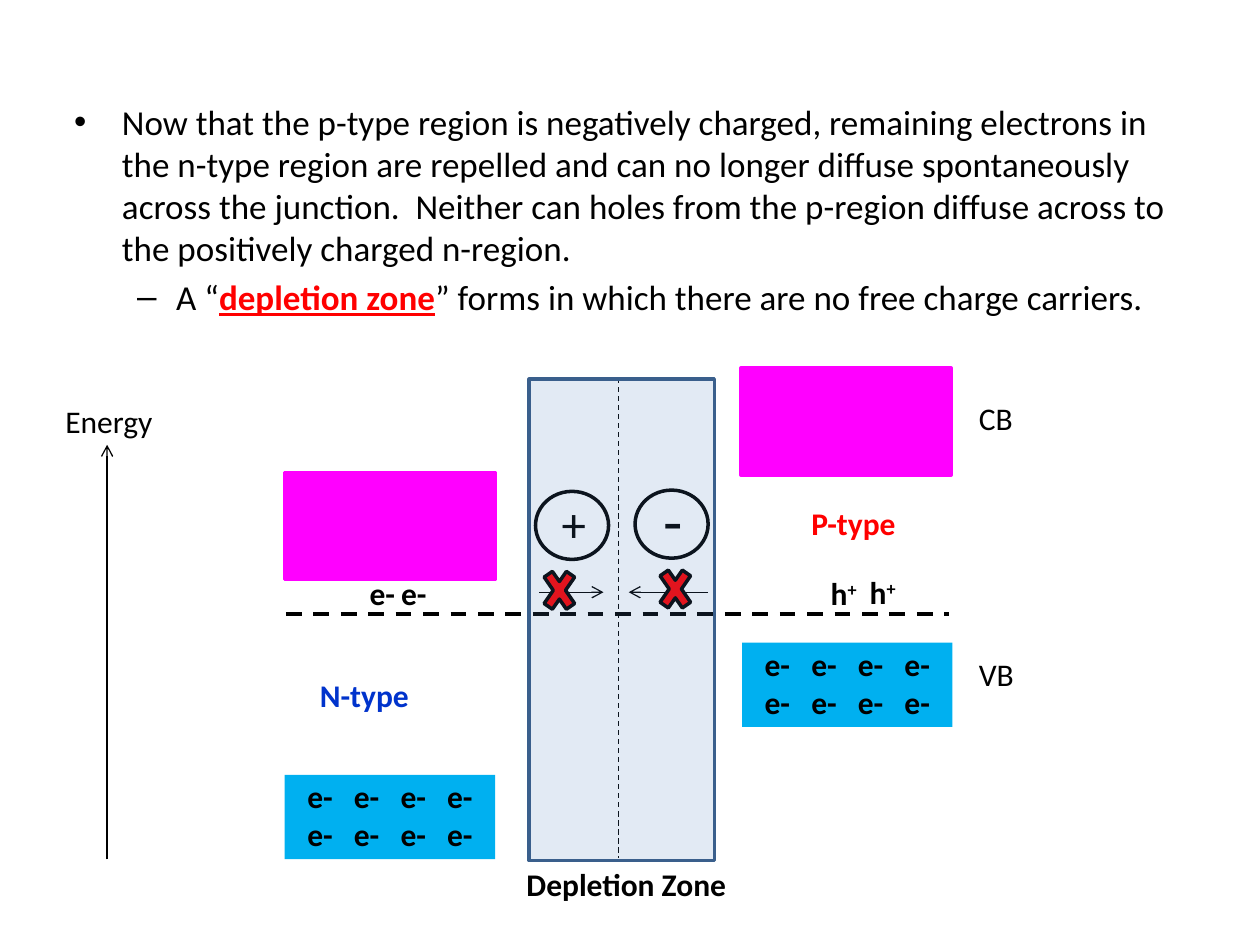
from lxml.etree import SubElement
from pptx import Presentation
from pptx.dml.color import RGBColor
from pptx.enum.dml import MSO_LINE
from pptx.enum.shapes import MSO_CONNECTOR, MSO_SHAPE
from pptx.enum.text import PP_ALIGN
from pptx.oxml.ns import qn
from pptx.util import Inches, Pt

COLORS = {
    "black": "000000", "red": "FF0000", "blue": "0033CC", "valence": "00B0F0",
    "conduction": "FF00FF", "zone": "4F81BD", "zone_edge": "3A5F8C",
}
FONT = "Calibri"

# Bullet, left margin, hanging indent, runs of (text, is key term)
BULLETS = [
    ("•", 0.38, 0.38, [
        ("Now that the p-type region is negatively charged, remaining electrons in "
         "the n-type region are repelled and can no longer diffuse spontaneously "
         "across the junction.  Neither can holes from the p-region diffuse across "
         "to the positively charged n-region.", False)]),
    ("–", 0.81, 0.31, [
        ("A “", False), ("depletion zone", True),
        ("” forms in which there are no free charge carriers.", False)]),
]

# Left and top of each band
BAND_WIDTH, CONDUCTION_HEIGHT, VALENCE_HEIGHT = 1.67, 0.85, 0.67
CONDUCTION_BANDS = [(2.26, 3.75), (5.88, 2.92)]
VALENCE_BANDS = [(2.26, 6.15), (5.89, 5.1)]
ELECTRON_ROWS, ELECTRONS_PER_ROW, ELECTRON_PITCH = 2, 4, 0.37

# Text, left, top, width, colour, bold
LABELS = [
    ("Energy", 0.42, 3.14, 0.96, "black", False),
    ("CB", 7.67, 3.12, 0.58, "black", False),
    ("VB", 7.67, 5.15, 0.58, "black", False),
    ("N-type", 2.44, 5.32, 0.92, "blue", True),
    ("P-type", 6.34, 3.95, 0.92, "red", True),
    ("Depletion Zone", 4.08, 6.82, 1.88, "black", True),
]
# Text, superscript, left, top
CARRIER_WIDTH = 0.61
CARRIERS = [
    ("e-", "", 2.73, 4.51), ("e-", "", 2.98, 4.51),
    ("h", "+", 6.39, 4.51), ("h", "+", 6.7, 4.5),
]
# Sign, size, text left and top, circle left and top
IONS = [("+", 28, 4.36, 3.87, 4.25, 3.9), ("-", 36, 5.17, 3.77, 5.04, 3.89)]
BLOCKED_MARKS = [(4.27, 4.44), (5.19, 4.43)]

# Start, end, weight, dashed, arrow
LINES = [
    ((2.27, 4.87), (7.53, 4.87), 2.25, True, False),
    ((4.91, 3), (4.91, 6.81), 0.75, True, False),
    ((4.28, 4.7), (4.79, 4.7), 0.75, False, True),
    ((5.62, 4.7), (4.99, 4.7), 0.75, False, True),
    ((0.85, 6.82), (0.85, 3.53), 0.75, False, True),
]


def rgb(name):
    return RGBColor.from_string(COLORS[name])


def add_block(slide, preset, left, top, width, height, fill=None, edge=None):
    block = slide.shapes.add_shape(
        preset, Inches(left), Inches(top), Inches(width), Inches(height))
    block.shadow.inherit = False
    if fill:
        block.fill.solid()
        block.fill.fore_color.rgb = rgb(fill)
    else:
        block.fill.background()
    if edge:
        block.line.color.rgb = rgb(edge)
        block.line.width = Pt(2)
    else:
        block.line.fill.background()
    return block


def add_text_frame(slide, left, top, width, height):
    frame = slide.shapes.add_textbox(
        Inches(left), Inches(top), Inches(width), Inches(height)).text_frame
    frame.word_wrap = True
    return frame


def add_run(paragraph, text, size=18, color="black", bold=False):
    run = paragraph.add_run()
    run.text = text
    run.font.name = FONT
    run.font.size = Pt(size)
    run.font.bold = bold
    run.font.color.rgb = rgb(color)
    return run


def add_line(slide, start, end, weight, dashed, arrow):
    line = slide.shapes.add_connector(
        MSO_CONNECTOR.STRAIGHT, *(Inches(value) for value in start + end))
    line.line.color.rgb = rgb("black")
    line.line.width = Pt(weight)
    if dashed:
        line.line.dash_style = MSO_LINE.DASH
    if arrow:
        SubElement(line.line._get_or_add_ln(), qn("a:tailEnd"), type="arrow")
    SubElement(line._element.spPr, qn("a:effectLst"))


def add_bullets(slide):
    frame = add_text_frame(slide, 0.49, 0.75, 9, 1.92)
    for index, (bullet, margin, hanging, runs) in enumerate(BULLETS):
        paragraph = frame.paragraphs[0] if index == 0 else frame.add_paragraph()
        paragraph.level = index
        paragraph.space_before = Pt(4)
        properties = paragraph._p.get_or_add_pPr()
        properties.set("marL", str(Inches(margin)))
        properties.set("indent", str(-Inches(hanging)))
        SubElement(properties, qn("a:buFont"), typeface="Arial")
        SubElement(properties, qn("a:buChar"), char=bullet)
        for text, is_key in runs:
            run = add_run(paragraph, text, 20, "red" if is_key else "black", is_key)
            run.font.underline = is_key


def add_valence_band(slide, left, top):
    """Filled band with rows of electrons spaced by tab stops."""
    add_block(slide, MSO_SHAPE.RECTANGLE, left, top, BAND_WIDTH, VALENCE_HEIGHT,
              "valence")
    frame = add_text_frame(slide, left + 0.08, top - 0.03, 1.58, 0.71)
    for row in range(ELECTRON_ROWS):
        paragraph = frame.paragraphs[0] if row == 0 else frame.add_paragraph()
        stops = SubElement(paragraph._p.get_or_add_pPr(), qn("a:tabLst"))
        for column in range(1, ELECTRONS_PER_ROW):
            SubElement(stops, qn("a:tab"), algn="l",
                       pos=str(Inches(column * ELECTRON_PITCH)))
        add_run(paragraph, "\t".join(["e-"] * ELECTRONS_PER_ROW), bold=True)


def main():
    deck = Presentation()
    deck.slide_width, deck.slide_height = Inches(10), Inches(7.5)
    slide = deck.slides.add_slide(deck.slide_layouts[6])

    add_bullets(slide)
    for left, top in CONDUCTION_BANDS:
        add_block(slide, MSO_SHAPE.RECTANGLE, left, top, BAND_WIDTH,
                  CONDUCTION_HEIGHT, "conduction", "conduction")
    for left, top in VALENCE_BANDS:
        add_valence_band(slide, left, top)
    for line in LINES:
        add_line(slide, *line)
    for sign, size, left, top, circle_left, circle_top in IONS:
        frame = add_text_frame(slide, left, top, 0.38, size / 50)
        add_run(frame.paragraphs[0], sign, size)
        add_block(slide, MSO_SHAPE.OVAL, circle_left, circle_top, 0.58, 0.54,
                  edge="black")
    for text, superscript, left, top in CARRIERS:
        paragraph = add_text_frame(slide, left, top, CARRIER_WIDTH, 0.4).paragraphs[0]
        paragraph.alignment = PP_ALIGN.CENTER
        add_run(paragraph, text, bold=True)
        if superscript:
            raised = add_run(paragraph, superscript, bold=True)
            raised.font._element.set("baseline", "30000")
    for left, top in BLOCKED_MARKS:
        add_block(slide, MSO_SHAPE.MATH_MULTIPLY, left, top, 0.34, 0.49,
                  "red", "black")

    zone = add_block(slide, MSO_SHAPE.RECTANGLE, 4.2, 3.01, 1.47, 3.82,
                     "zone", "zone_edge")
    zone_color = zone._element.spPr.find(qn("a:solidFill")).find(qn("a:srgbClr"))
    SubElement(zone_color, qn("a:alpha"), val="16000")
    for text, left, top, width, color, bold in LABELS:
        frame = add_text_frame(slide, left, top, width, 0.4)
        add_run(frame.paragraphs[0], text, color=color, bold=bold)

    deck.save("out.pptx")


if __name__ == "__main__":
    main()
